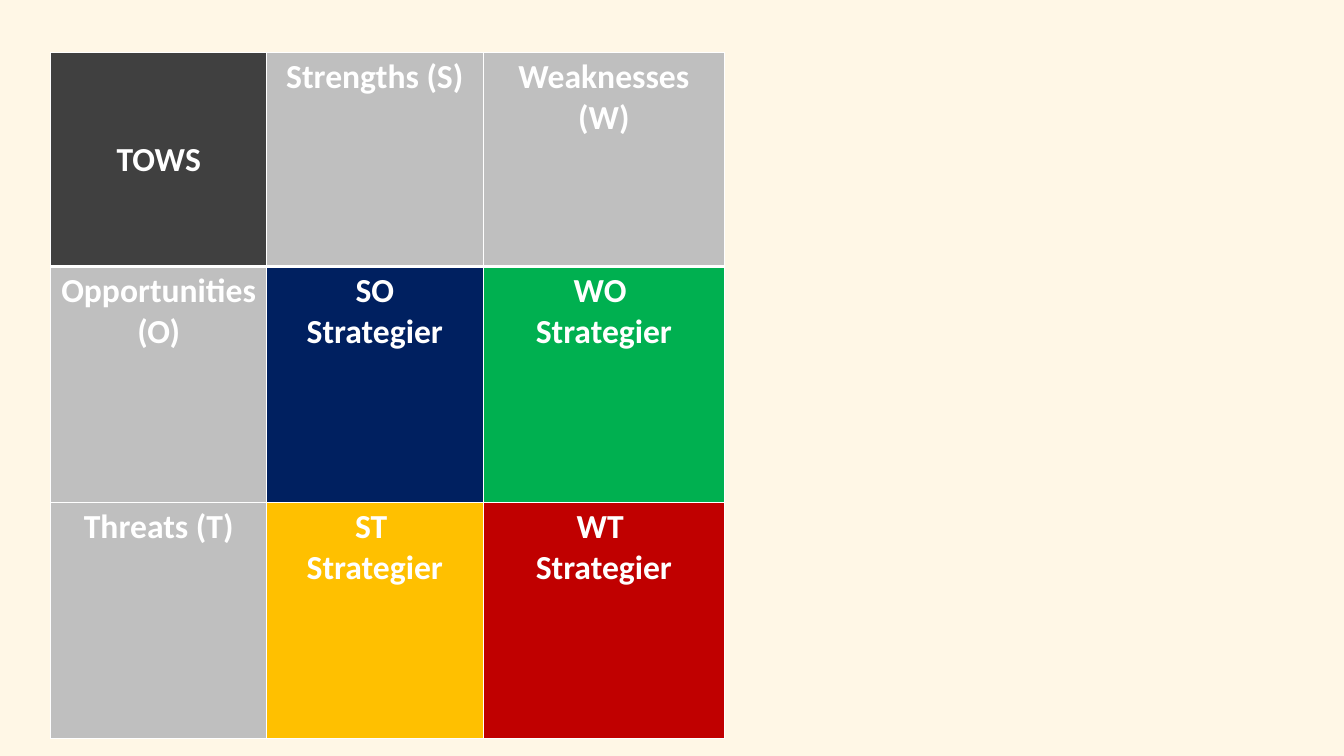
from lxml.etree import SubElement
from pptx import Presentation
from pptx.dml.color import RGBColor
from pptx.enum.text import MSO_ANCHOR, PP_ALIGN
from pptx.oxml.ns import qn
from pptx.util import Inches, Pt

HUES = {
    "cream": "FFF7E6", "white": "FFFFFF", "dark": "404040", "gray": "BFBFBF",
    "navy": "002060", "green": "00B050", "gold": "FFC000", "red": "C00000",
}
COLS = [2.86, 2.86, 3.2]
ROWS = [2.83, 3.12, 3.12]
# Each cell: fill, then its lines of text
CELLS = [
    [("dark", ["TOWS"]), ("gray", ["Strengths (S)"]), ("gray", ["Weaknesses (W)"])],
    [("gray", ["Opportunities (O)"]), ("navy", ["SO", "Strategier"]),
     ("green", ["WO ", "Strategier"])],
    [("gray", ["Threats (T)"]), ("gold", ["ST ", "Strategier"]),
     ("red", ["WT ", "Strategier"])],
]


def edge(cell, side, width):
    line = SubElement(cell._tc.get_or_add_tcPr(), qn(f"a:ln{side}"), w=str(Pt(width)))
    fill = SubElement(line, qn("a:solidFill"))
    SubElement(fill, qn("a:srgbClr"), val=HUES["white"])


# Slide and background
deck = Presentation()
deck.slide_width, deck.slide_height = Inches(17.78), Inches(10)
slide = deck.slides.add_slide(deck.slide_layouts[6])
back = slide.background.fill
back.solid()
back.fore_color.rgb = RGBColor.from_string(HUES["cream"])

# TOWS matrix
grid = slide.shapes.add_table(
    len(ROWS), len(COLS), Inches(0.67), Inches(0.7),
    Inches(sum(COLS)), Inches(sum(ROWS))).table
for col, width in zip(grid.columns, COLS):
    col.width = Inches(width)
for row, height in zip(grid.rows, ROWS):
    row.height = Inches(height)

# Cells: the line under the header row is thicker
for r, items in enumerate(CELLS):
    for c, (hue, lines) in enumerate(items):
        cell = grid.cell(r, c)
        for side in "LRTB":
            thick = (r, side) in [(0, "B"), (1, "T")]
            edge(cell, side, 3 if thick else 1)
        cell.fill.solid()
        cell.fill.fore_color.rgb = RGBColor.from_string(HUES[hue])
        cell.vertical_anchor = MSO_ANCHOR.MIDDLE if r == c == 0 else MSO_ANCHOR.TOP
        frame = cell.text_frame
        for i, text in enumerate(lines):
            para = frame.add_paragraph() if i else frame.paragraphs[0]
            para.alignment = PP_ALIGN.CENTER
            run = para.add_run()
            run.text = text
            run.font.name = "Calibri"
            run.font.size = Pt(32)
            run.font.bold = True
            run.font.color.rgb = RGBColor.from_string(HUES["white"])

deck.save("out.pptx")
